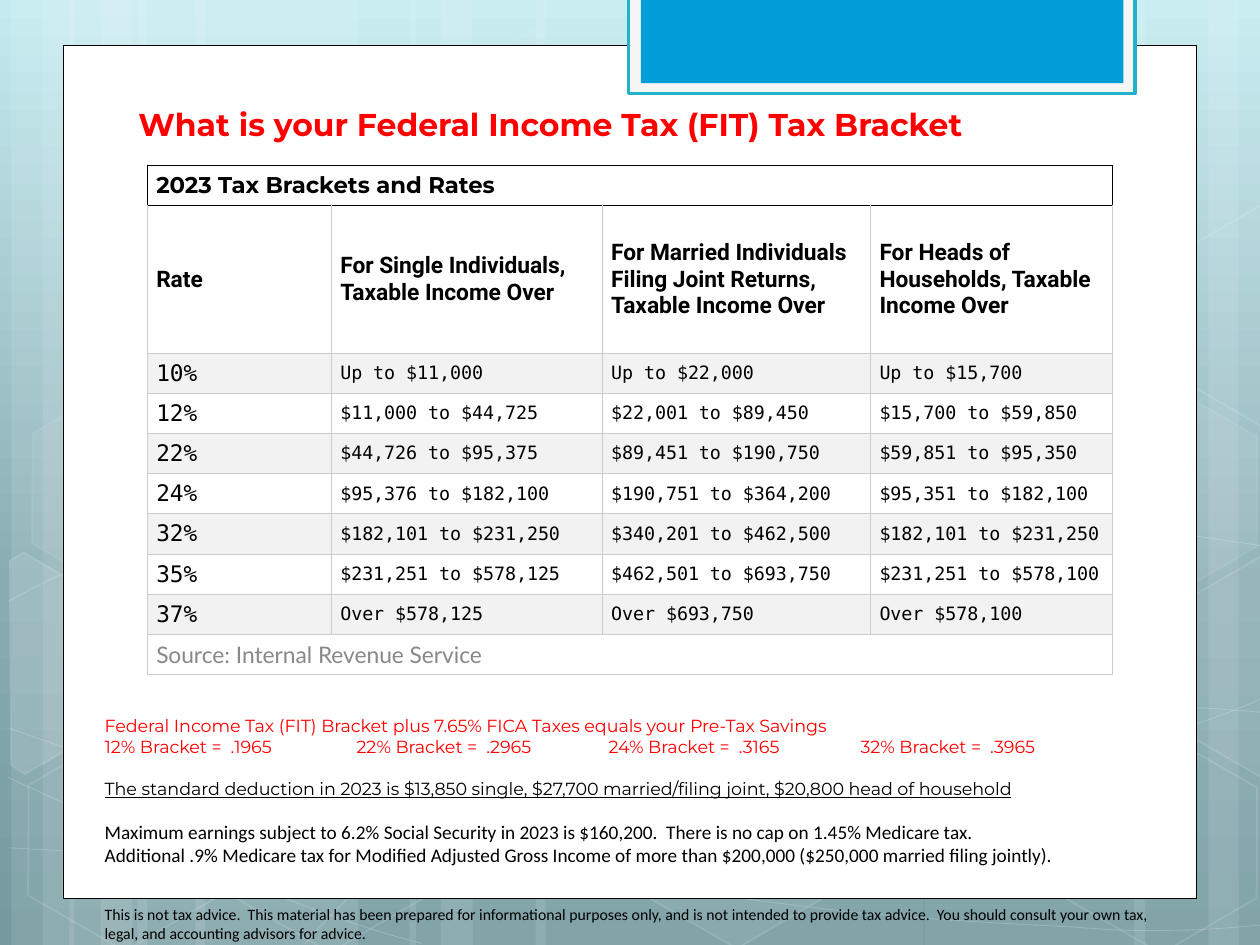
"""Build a slide about the 2023 federal income tax brackets."""
from copy import deepcopy
from dataclasses import dataclass
from math import cos, radians, sin
from typing import NamedTuple, Optional

from lxml.etree import SubElement
from pptx import Presentation
from pptx.dml.color import RGBColor
from pptx.enum.shapes import MSO_SHAPE
from pptx.enum.text import MSO_ANCHOR
from pptx.oxml import parse_xml
from pptx.oxml.ns import nsdecls, qn
from pptx.util import Cm, Pt


@dataclass(frozen=True)
class Theme:
    white: str = "FFFFFF"
    black: str = "000000"
    red: str = "FF0000"
    grey: str = "888888"
    grid: str = "CCCCCC"
    plain_row: str = "FEFEFE"
    band_row: str = "F2F2F2"
    tab_rim: str = "F5F5F5"
    tab_edge: str = "21B2C9"
    tab_core: str = "009DD9"
    sky: tuple = ((0, "C4EBF1"), (0.62, "88ACB2"), (1, "749AA0"))
    heading: str = "Montserrat"
    body: str = "Calibri"
    header: str = "Roboto"
    figures: str = "DejaVu Sans Mono"
    source: str = "Lato"
    title_size: float = 18
    table_size: float = 13
    amount_size: float = 10.5
    note_size: float = 10
    limit_size: float = 11
    disclaimer_size: float = 9


THEME = Theme()


class Box(NamedTuple):
    left: float
    top: float
    width: float
    height: float


class Paint(NamedTuple):
    fill: Optional[str] = None
    fill_alpha: int = 100
    line: Optional[str] = None
    line_alpha: int = 100
    weight: float = 1


class Style(NamedTuple):
    font: str
    size: float
    color: str = THEME.black
    bold: bool = False
    underline: bool = False


class Note(NamedTuple):
    text: str
    style: Style
    before: float = 0


class Curve(NamedTuple):
    knots: list
    straight: Optional[int] = None


TILT = 30
HEXAGON_SIZE = (4.45, 3.86)
STRIPES = [(2.77, 4.45), (0.23, 1.27), (0.86, 2.11), (3.94, 4.45), (1.4, 1.27), (2.03, 2.11),
           (18.64, 4.45), (24.36, 1.27), (22.86, 2.11), (10.8, 7.82), (8.26, 1.27), (8.89, 2.11)]
CURVES = [
    Curve([(0.18, 17.09), (1.55, 17.17), (2.92, 17.25), (4.83, 17.22), (6.73, 17.2), (9.09, 17.15),
           (11.63, 16.89), (14.17, 16.64), (17.78, 16.15), (20.12, 15.67), (22.43, 15.19),
           (24.82, 14.43), (25.58, 14)]),
    Curve([(0.18, 12.12), (0.91, 11.71), (1.65, 11.33), (3.07, 10.95), (4.52, 10.57), (6.58, 10.01),
           (8.81, 9.83), (11.07, 9.65), (13.82, 9.63), (16.61, 9.83), (19.41, 10.03),
           (24.05, 10.82), (25.58, 11.02)]),
    Curve([(0.15, 15.67), (3.23, 17.07), (6.27, 18.47), (8.51, 19.02)]),
    Curve([(0.18, 14.68), (0.97, 14.96), (1.78, 15.24), (3.25, 15.65), (4.72, 16.03), (6.93, 16.66),
           (9.07, 17.09), (11.18, 17.53), (13.84, 17.98), (15.95, 18.24), (18.06, 18.52),
           (20.32, 18.62), (21.67, 18.69), (23.01, 18.8), (23.34, 18.75), (24, 18.75),
           (24.66, 18.72), (25.12, 18.67), (25.58, 18.64)]),
    Curve([(6.15, 19.02), (6.6, 18.52), (7.06, 18.01), (7.67, 17.55), (8.31, 17.07), (9.14, 16.59),
           (9.86, 16.23), (10.57, 15.88), (11, 15.72), (11.91, 15.47), (12.85, 15.21),
           (14.55, 14.86), (15.44, 14.68), (16.36, 14.5), (16.48, 14.5), (17.27, 14.45),
           (18.06, 14.38), (19.3, 14.3), (20.17, 14.27), (21.06, 14.25), (22.5, 14.27),
           (22.5, 14.27), (24.21, 14.27), (24.66, 14.3), (25.1, 14.33), (25.32, 14.35),
           (25.55, 14.38), (25.48, 14.35), (25.55, 14.38)], straight=21),
]
HEXAGONS = [(8.48, 0.91, 4, 8), (12.62, 14.96, 6, 12), (0.28, 15.01, 0, 12), (0.36, 7.92, 7, 8),
            (4.42, 15.04, 0, 12), (19.13, 11.51, 10, 12), (21.18, 15.06, 0, 12), (21.18, 7.98, 7, 8)]
LEFT_CUT = [(0.2, 11.3), (0.48, 11.13), (2.44, 12.27), (2.41, 14.48), (0.51, 15.6), (0.23, 15.42)]
RIGHT_CUT = [(23.52, 12.32), (25.45, 11.2), (25.63, 11.33), (25.63, 15.57), (25.45, 15.67), (23.52, 14.55)]
UPPER_CUT = [(x, y - 7.08) for x, y in RIGHT_CUT]
CUTS = [(LEFT_CUT, (0.91, 13.61), 10), (RIGHT_CUT, (25.02, 13.21), 4), (UPPER_CUT, (25.02, 6.13), 0)]

COLUMNS = (3.71, 5.46, 5.41, 4.88)
HEADER_HEIGHT, ROW_HEIGHT = 2.98, 0.81
BRACKETS = [
    ("2023 Tax Brackets and Rates",),
    ("Rate", "For Single Individuals, Taxable Income Over",
     "For Married Individuals Filing Joint Returns, Taxable Income Over",
     "For Heads of Households, Taxable Income Over"),
    ("10%", "Up to $11,000", "Up to $22,000", "Up to $15,700"),
    ("12%", "$11,000 to $44,725", "$22,001 to $89,450", "$15,700 to $59,850"),
    ("22%", "$44,726 to $95,375", "$89,451 to $190,750", "$59,851 to $95,350"),
    ("24%", "$95,376 to $182,100", "$190,751 to $364,200", "$95,351 to $182,100"),
    ("32%", "$182,101 to $231,250", "$340,201 to $462,500", "$182,101 to $231,250"),
    ("35%", "$231,251 to $578,125", "$462,501 to $693,750", "$231,251 to $578,100"),
    ("37%", "Over $578,125", "Over $693,750", "Over $578,100"),
    ("Source: Internal Revenue Service",),
]

TITLE = Note("What is your Federal Income Tax (FIT) Tax Bracket",
             Style(THEME.heading, THEME.title_size, THEME.red, bold=True))
SAVINGS = Style(THEME.heading, THEME.note_size, THEME.red)
LIMIT = Style(THEME.body, THEME.limit_size)
NOTES = [
    Note("Federal Income Tax (FIT) Bracket plus 7.65% FICA Taxes equals your Pre-Tax Savings", SAVINGS),
    Note("12% Bracket =  .1965\t22% Bracket =  .2965\t24% Bracket =  .3165\t32% Bracket =  .3965", SAVINGS),
    Note("The standard deduction in 2023 is $13,850 single, $27,700 married/filing joint, "
         "$20,800 head of household", Style(THEME.heading, THEME.note_size, underline=True), 12.2),
    Note("Maximum earnings subject to 6.2% Social Security in 2023 is $160,200.  "
         "There is no cap on 1.45% Medicare tax.", LIMIT, 12.2),
    Note("Additional .9% Medicare tax for Modified Adjusted Gross Income of more than $200,000 "
         "($250,000 married filing jointly).", LIMIT),
    Note("This is not tax advice.  This material has been prepared for informational purposes only, "
         "and is not intended to provide tax advice.  You should consult your own tax, legal, and "
         "accounting advisors for advice.", Style(THEME.body, THEME.disclaimer_size), 22),
]


def apply_paint(shape, paint: Paint) -> None:
    shape.shadow.inherit = False
    for part, color in ((shape.fill, paint.fill), (shape.line.fill, paint.line)):
        if color:
            part.solid()
            part.fore_color.rgb = RGBColor.from_string(color)
        else:
            part.background()
    if paint.line:
        shape.line.width = Pt(paint.weight)
    for place, alpha in (("a:solidFill", paint.fill_alpha), ("a:ln/a:solidFill", paint.line_alpha)):
        steps = [qn(tag) for tag in f"{place}/a:srgbClr".split("/")]
        color = shape.element.spPr.find("/".join(steps))
        if color is not None and alpha < 100:
            SubElement(color, qn("a:alpha")).set("val", str(alpha * 1000))


def draw_shape(slide, kind: MSO_SHAPE, box: Box, paint: Paint):
    shape = slide.shapes.add_shape(kind, *map(Cm, box))
    apply_paint(shape, paint)
    return shape


def draw_outline(slide, points: list, paint: Paint, close: bool):
    start, *rest = [(Cm(x), Cm(y)) for x, y in points]
    builder = slide.shapes.build_freeform(*start)
    builder.add_line_segments(rest, close=close)
    outline = builder.convert_to_shape()
    apply_paint(outline, paint)
    return outline


def draw_curve(slide, curve: Curve, paint: Paint) -> None:
    outline = draw_outline(slide, curve.knots, paint, False)
    segments = list(outline.element.iter(qn("a:lnTo")))
    if curve.straight is not None:
        del segments[curve.straight]
    for first in range(0, len(segments), 3):
        bend, *others = segments[first:first + 3]
        bend.tag = qn("a:cubicBezTo")
        for other in others:
            bend.append(other[0])
            other.getparent().remove(other)


def draw_cut(slide, points: list, center: tuple, paint: Paint) -> None:
    turn, (middle, level) = radians(TILT), center
    upright = [(middle + (x - middle) * cos(turn) + (y - level) * sin(turn),
                level - (x - middle) * sin(turn) + (y - level) * cos(turn)) for x, y in points]
    draw_outline(slide, upright, paint, True).rotation = TILT


def write_paragraph(paragraph, note: Note) -> None:
    paragraph.text = note.text
    paragraph.space_before = Pt(note.before)
    font, style = paragraph.font, note.style
    font.name, font.size, font.bold, font.underline = style.font, Pt(style.size), style.bold, style.underline
    font.color.rgb = RGBColor.from_string(style.color)
    if "\t" in note.text:
        stops = "".join(f'<a:tab pos="{Cm(5.08 * n)}" algn="l"/>' for n in (1, 2, 3))
        tabs = parse_xml(f"<a:tabLst {nsdecls('a')}>{stops}</a:tabLst>")
        paragraph._p.pPr.find(qn("a:defRPr")).addprevious(tabs)


def write_box(slide, box: Box, notes: list, indent: float) -> None:
    frame = slide.shapes.add_textbox(*map(Cm, box)).text_frame
    frame.word_wrap = True
    frame.margin_left = Cm(indent)
    for index, note in enumerate(notes):
        write_paragraph(frame.add_paragraph() if index else frame.paragraphs[0], note)


def cell_style(row: int, column: int) -> Style:
    if row < 2:
        return Style(THEME.header if row else THEME.heading, THEME.table_size, bold=True)
    if row == len(BRACKETS) - 1:
        return Style(THEME.source, THEME.table_size, THEME.grey)
    return Style(THEME.figures, THEME.amount_size if column else THEME.table_size)


def set_borders(cell, colors: dict) -> None:
    for index, (side, color) in enumerate(colors.items()):
        cell._tc.get_or_add_tcPr().insert(index, parse_xml(
            f'<a:{side} {nsdecls("a")} w="{Pt(0.75)}"><a:solidFill><a:srgbClr val="{color}"/>'
            f'</a:solidFill></a:{side}>'))


def draw_brackets(slide) -> None:
    heights = [HEADER_HEIGHT if row == 1 else ROW_HEIGHT for row in range(len(BRACKETS))]
    box = Box(2.97, 3.33, sum(COLUMNS), sum(heights))
    table = slide.shapes.add_table(len(BRACKETS), len(COLUMNS), *map(Cm, box)).table
    table.first_row = table.horz_banding = False
    for column, width in zip(table.columns, COLUMNS):
        column.width = Cm(width)
    for row, texts in enumerate(BRACKETS):
        table.rows[row].height = Cm(heights[row])
        if len(texts) == 1:
            table.cell(row, 0).merge(table.cell(row, len(COLUMNS) - 1))
        banded = 2 <= row < len(BRACKETS) - 1 and row % 2 == 0
        edge = THEME.grid if row else THEME.black
        sides = {"lnL": edge, "lnR": edge, "lnT": THEME.black if row < 2 else edge, "lnB": edge}
        for column in range(len(COLUMNS)):
            cell = table.cell(row, column)
            cell.fill.solid()
            cell.fill.fore_color.rgb = RGBColor.from_string(THEME.band_row if banded else THEME.plain_row)
            set_borders(cell, sides)
            cell.vertical_anchor = MSO_ANCHOR.MIDDLE
            cell.margin_left = cell.margin_right = Cm(0.18)
            cell.margin_top = cell.margin_bottom = Cm(0.08)
            if column < len(texts):
                write_paragraph(cell.text_frame.paragraphs[0], Note(texts[column], cell_style(row, column)))


def glass(fill_alpha: int, line_alpha: int) -> Paint:
    return Paint(THEME.white if fill_alpha else None, fill_alpha, THEME.white, line_alpha)


def draw_backdrop(slide) -> None:
    sky = slide.background.fill
    sky.gradient()
    sky.gradient_angle = 270
    stops = slide.element.find(".//" + qn("a:gsLst"))
    stops.insert(1, deepcopy(stops[0]))
    for stop, (position, color) in zip(sky.gradient_stops, THEME.sky):
        stop.position = position
        stop.color.rgb = RGBColor.from_string(color)
    for left, width in STRIPES:
        draw_shape(slide, MSO_SHAPE.RECTANGLE, Box(left, 0, width, 19.05), Paint(THEME.white, 10))
    for curve in CURVES:
        draw_curve(slide, curve, Paint(line=THEME.white, line_alpha=20, weight=0.5))
    for left, top, fill_alpha, line_alpha in HEXAGONS:
        hexagon = draw_shape(slide, MSO_SHAPE.HEXAGON, Box(left, top, *HEXAGON_SIZE), glass(fill_alpha, line_alpha))
        hexagon.adjustments[0] = 0.285
        hexagon.rotation = TILT
    for points, center, fill_alpha in CUTS:
        draw_cut(slide, points, center, glass(fill_alpha, 12))


def main() -> None:
    deck = Presentation()
    deck.slide_width, deck.slide_height = Cm(25.4), Cm(19.05)
    slide = deck.slides.add_slide(deck.slide_layouts[6])
    draw_backdrop(slide)
    for box, paint in (
        (Box(1.27, 0.91, 22.86, 17.2), Paint(THEME.white, line=THEME.black, weight=0.5)),
        (Box(12.67, -0.05, 10.21, 1.94), Paint(THEME.tab_rim, line=THEME.tab_edge, weight=2)),
        (Box(12.92, -0.05, 9.73, 1.73), Paint(THEME.tab_core)),
    ):
        draw_shape(slide, MSO_SHAPE.RECTANGLE, box, paint)
    write_box(slide, Box(2.54, 1.99, 19.25, 1.02), [TITLE], 0.25)
    write_box(slide, Box(1.68, 14.28, 22.07, 4.77), NOTES, 0.43)
    draw_brackets(slide)
    deck.save("out.pptx")


if __name__ == "__main__":
    main()
